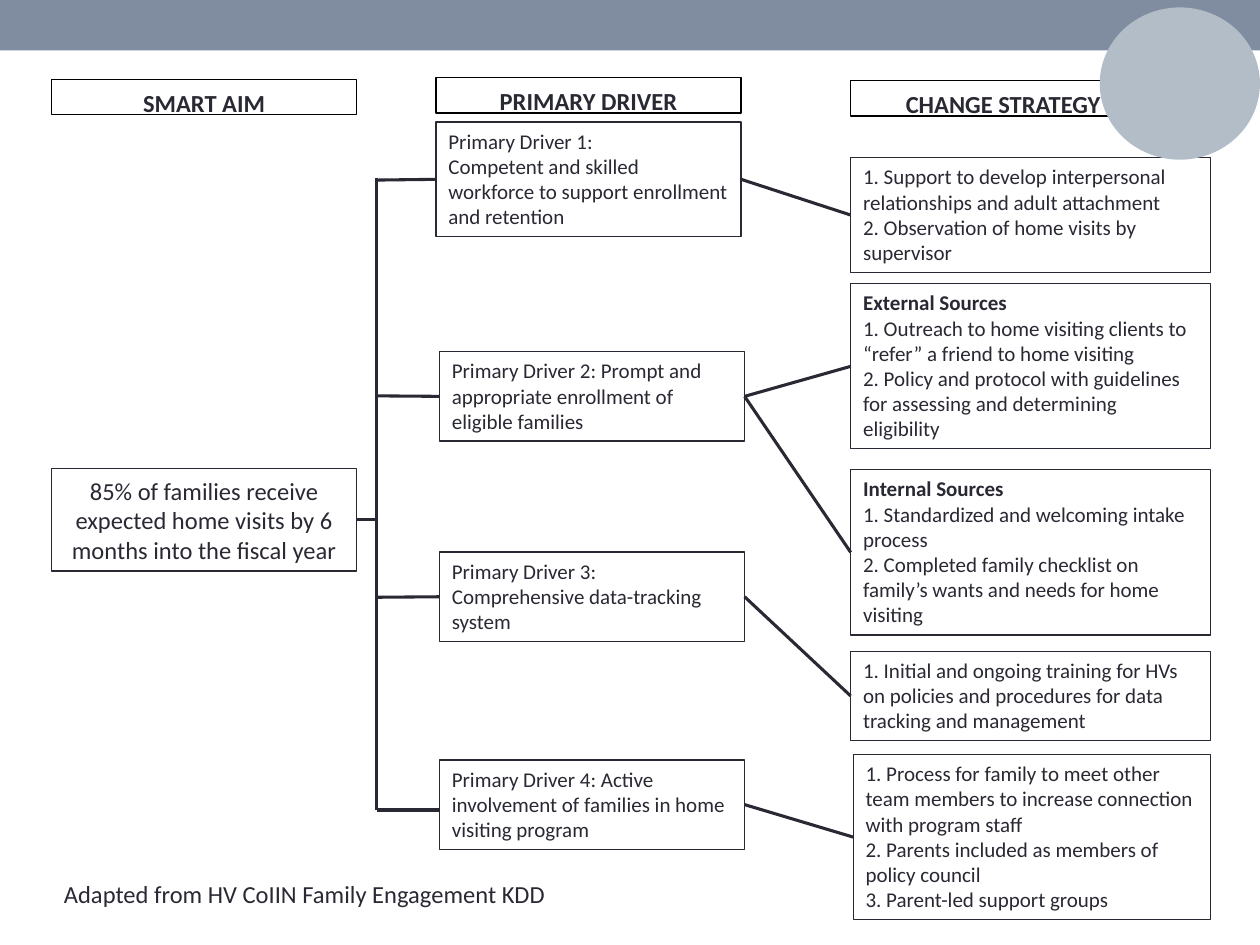
import pptx
import pptx.util
import pptx.dml.color
import pptx.enum.shapes
import pptx.enum.text
import pptx.oxml.ns
import lxml.etree

Cm, Pt = pptx.util.Cm, pptx.util.Pt
SHAPE = pptx.enum.shapes.MSO_SHAPE
ANCHOR = pptx.enum.text.MSO_ANCHOR
ALIGN = pptx.enum.text.PP_ALIGN
AUTO = pptx.enum.text.MSO_AUTO_SIZE

INK, BLACK, WHITE, BAND, DISC = "292934", "000000", "FFFFFF", "808DA0", "B3BDC8"
COL_W = 6.15
TRUNK_X = 7.59

HEADINGS = [
    ("SMART AIM", 1.04, 1.6),
    ("PRIMARY DRIVER", 8.79, 1.57),
    ("CHANGE STRATEGY", 17.15, 1.63),
]
AIM = (["85% of families receive expected home visits by 6 months into the fiscal year"],
       (1.04, 9.45, COL_W, 2.06))
SOURCE = (["Adapted from HV CoIIN Family Engagement KDD"], (1.04, 17.6, 21.26, 0.86))
DRIVERS = [
    (["Primary Driver 1:",
      "Competent and skilled workforce to support enrollment and retention"],
     (8.79, 2.46, COL_W, 2.31)),
    (["Primary Driver 2: Prompt and appropriate enrollment of eligible families"],
     (8.86, 7.09, COL_W, 1.8)),
    (["Primary Driver 3: Comprehensive data-tracking system"],
     (8.86, 11.13, COL_W, 1.8)),
    (["Primary Driver 4: Active involvement of families in home visiting program"],
     (8.86, 15.32, COL_W, 1.8)),
]
BRANCHES = [3.63, 7.98, 12.04, 16.33]
STRATEGIES = [
    (0, ["1. Support to develop interpersonal relationships and adult attachment",
         "2. Observation of home visits by supervisor"],
     (17.15, 3.18, 7.26, 2.31)),
    (1, ["External Sources",
         "1. Outreach to home visiting clients to “refer” a friend to home visiting",
         "2. Policy and protocol with guidelines for assessing and determining eligibility"],
     (17.15, 5.72, 7.26, 3.33)),
    (1, ["Internal Sources",
         "1. Standardized and welcoming intake process",
         "2. Completed family checklist on family’s wants and needs for home visiting"],
     (17.15, 9.47, 7.26, 3.33)),
    (2, ["1. Initial and ongoing training for HVs on policies and procedures for data "
         "tracking and management"],
     (17.15, 13.13, 7.26, 1.8)),
    (3, ["1. Process for family to meet other team members to increase connection with "
         "program staff",
         "2. Parents included as members of policy council",
         "3. Parent-led support groups"],
     (17.2, 15.21, 7.21, 3.33)),
]


def rgb(value):
    return pptx.dml.color.RGBColor.from_string(value)


def apply(target, values):
    for name, value in values.items():
        setattr(target, name, value)


def add_shape(s, kind, box, fill=None, line=None):
    sp = s.shapes.add_shape(kind, *map(Cm, box))
    sp.shadow.inherit = False
    if fill:
        sp.fill.solid()
        sp.fill.fore_color.rgb = rgb(fill)
    else:
        sp.fill.background()
    if line:
        sp.line.color.rgb = rgb(line)
        sp.line.width = Pt(0.75)
    else:
        sp.line.fill.background()
    return sp


def write(sp, lines, size=12, bold=(), frame=None, para=None):
    tf = sp.text_frame
    apply(tf, {"word_wrap": True, "vertical_anchor": ANCHOR.TOP, **(frame or {})})
    for i, line in enumerate(lines):
        p = tf.paragraphs[0] if i == 0 else tf.add_paragraph()
        apply(p, {"alignment": ALIGN.LEFT, **(para or {})})
        r = p.add_run()
        r.text = line
        apply(r.font, {"name": "Calibri", "size": Pt(size), "bold": line in bold})
        r.font.color.rgb = rgb(INK)


def connect(s, start, end):
    c = s.shapes.add_connector(pptx.enum.shapes.MSO_CONNECTOR.STRAIGHT,
                               *map(Cm, start + end))
    c.line.color.rgb = rgb(INK)
    c.line.width = Pt(1.75)
    lxml.etree.SubElement(c._element.spPr, pptx.oxml.ns.qn("a:effectLst"))


def left_mid(box):
    return box[0], box[1] + box[3] / 2


def right_mid(box):
    return box[0] + box[2], box[1] + box[3] / 2


def main():
    prs = pptx.Presentation()
    apply(prs, {"slide_width": Cm(25.4), "slide_height": Cm(19.05)})
    s = prs.slides.add_slide(prs.slide_layouts[6])
    grow = {"auto_size": AUTO.SHAPE_TO_FIT_TEXT}

    add_shape(s, SHAPE.RECTANGLE, (0, 0, 25.4, 1.02), BAND)
    for title, x, y in HEADINGS:
        sp = add_shape(s, SHAPE.RECTANGLE, (x, y, COL_W, 0.71), WHITE, BLACK)
        write(sp, [title], 14, [title], para={
            "alignment": ALIGN.CENTER, "line_spacing": 1.07, "space_after": Pt(8)})

    lines, box = SOURCE
    write(s.shapes.add_textbox(*map(Cm, box)), lines, 14, frame=grow)
    lines, aim_box = AIM
    write(add_shape(s, SHAPE.RECTANGLE, aim_box, line=INK), lines, 14,
          frame={**grow, "vertical_anchor": ANCHOR.MIDDLE},
          para={"alignment": ALIGN.CENTER})

    for (lines, box), y in zip(DRIVERS, BRANCHES):
        write(add_shape(s, SHAPE.RECTANGLE, box, line=INK), lines, frame=grow)
        connect(s, left_mid(box), (TRUNK_X, y)) if y != BRANCHES[-1] else \
            connect(s, (box[0], y), (TRUNK_X, y))
    for driver, lines, box in STRATEGIES:
        write(add_shape(s, SHAPE.RECTANGLE, box, line=INK), lines,
              bold=("External Sources", "Internal Sources"), frame=grow)
        connect(s, left_mid(box), right_mid(DRIVERS[driver][1]))

    hub = (TRUNK_X, right_mid(aim_box)[1])
    connect(s, right_mid(aim_box), hub)
    for end_y in (BRANCHES[0] - 0.05, BRANCHES[-1]):
        connect(s, hub, (TRUNK_X, end_y))
    add_shape(s, SHAPE.OVAL, (22.17, 0.15, 3.23, 3.07), DISC)
    prs.save("out.pptx")


if __name__ == "__main__":
    main()
